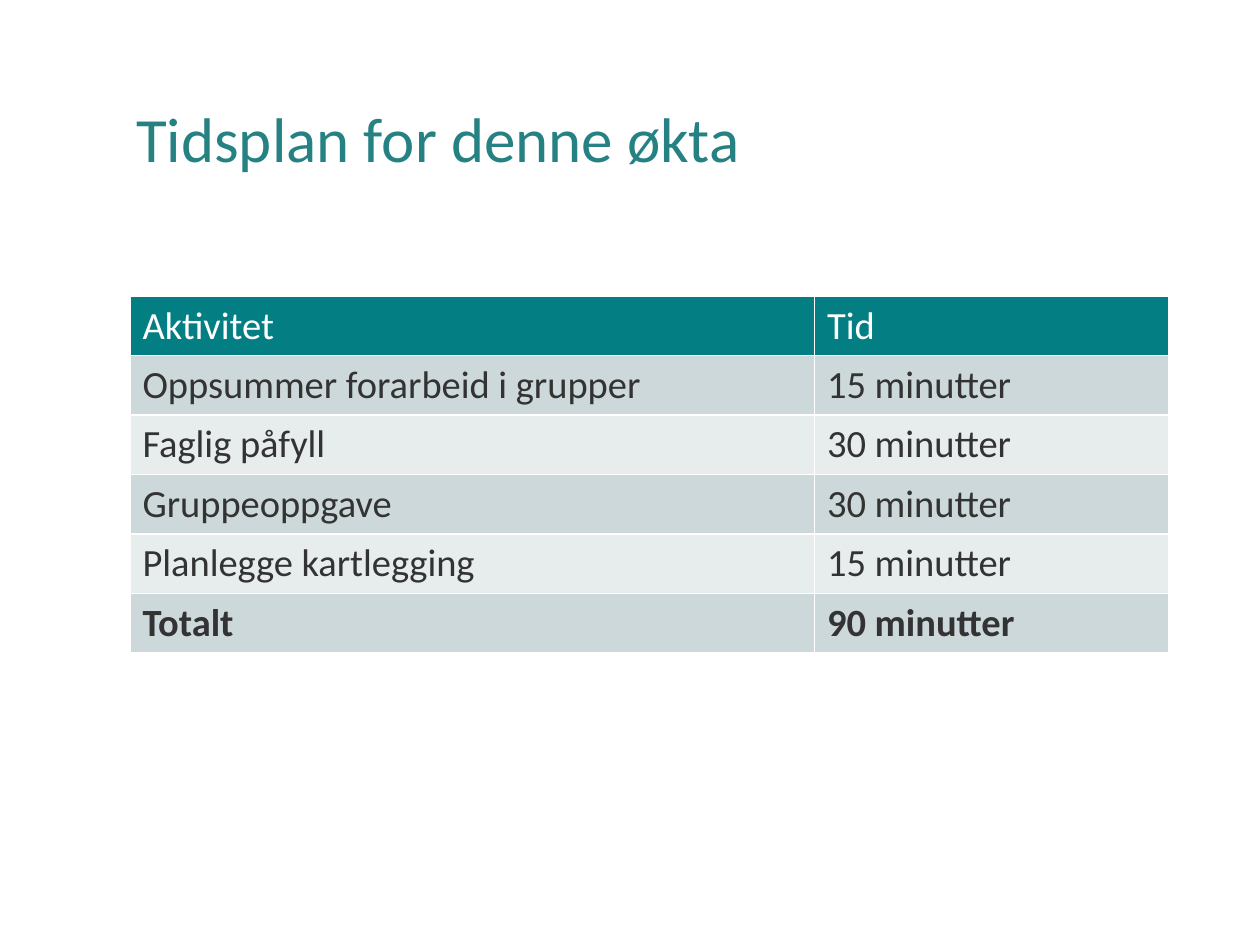
from pptx import Presentation
from pptx.dml.color import RGBColor
from pptx.enum.text import MSO_ANCHOR, PP_ALIGN
from pptx.util import Cm, Pt

TITLE = "Tidsplan for denne økta"
ROWS = [
    ("Aktivitet", "Tid"),
    ("Oppsummer forarbeid i grupper", "15 minutter"),
    ("Faglig påfyll", "30 minutter"),
    ("Gruppeoppgave", "30 minutter"),
    ("Planlegge kartlegging", "15 minutter"),
    ("Totalt", "90 minutter"),
]
WIDTHS = (13.8, 7.14)
HIGH = 1.04
HEX = {
    "title": "268183",
    "head": "037F83",
    "odd": "CCD8D9",
    "even": "E7ECED",
    "white": "FFFFFF",
    "text": "333333",
}


def color(name):
    return RGBColor.from_string(HEX[name])


def apply(item, form):
    for key, value in form.items():
        setattr(item, key, value)


def write(frame, text, size, ink, bold=False):
    line = frame.paragraphs[0]
    line.alignment = PP_ALIGN.LEFT
    run = line.add_run()
    run.text = text
    apply(run.font, {"name": "Calibri", "size": Pt(size), "bold": bold})
    run.font.color.rgb = color(ink)
    return line


def add_title(slide):
    title = slide.shapes.title
    apply(title, {"left": Cm(2.49), "top": Cm(1.02),
                  "width": Cm(21.06), "height": Cm(3.68)})
    frame = title.text_frame
    apply(frame, {"word_wrap": True, "vertical_anchor": MSO_ANCHOR.MIDDLE})
    write(frame, TITLE, 36, "title").line_spacing = 0.9


def add_plan(slide):
    last = len(ROWS) - 1
    table = slide.shapes.add_table(
        len(ROWS), len(WIDTHS), Cm(2.62), Cm(5.97),
        Cm(sum(WIDTHS)), Cm(HIGH * len(ROWS))).table
    for column, width in zip(table.columns, WIDTHS):
        column.width = Cm(width)
    for i, texts in enumerate(ROWS):
        table.rows[i].height = Cm(HIGH)
        fill = "head" if i == 0 else "odd" if i % 2 else "even"
        if i == last:
            fill = "odd"
        ink = "text" if i else "white"
        for j, text in enumerate(texts):
            cell = table.cell(i, j)
            cell.fill.solid()
            cell.fill.fore_color.rgb = color(fill)
            write(cell.text_frame, text, 22, ink, i == last)


def main():
    deck = Presentation()
    apply(deck, {"slide_width": Cm(25.4), "slide_height": Cm(19.05)})
    slide = deck.slides.add_slide(deck.slide_layouts[5])
    add_title(slide)
    add_plan(slide)
    deck.save("out.pptx")


if __name__ == "__main__":
    main()
